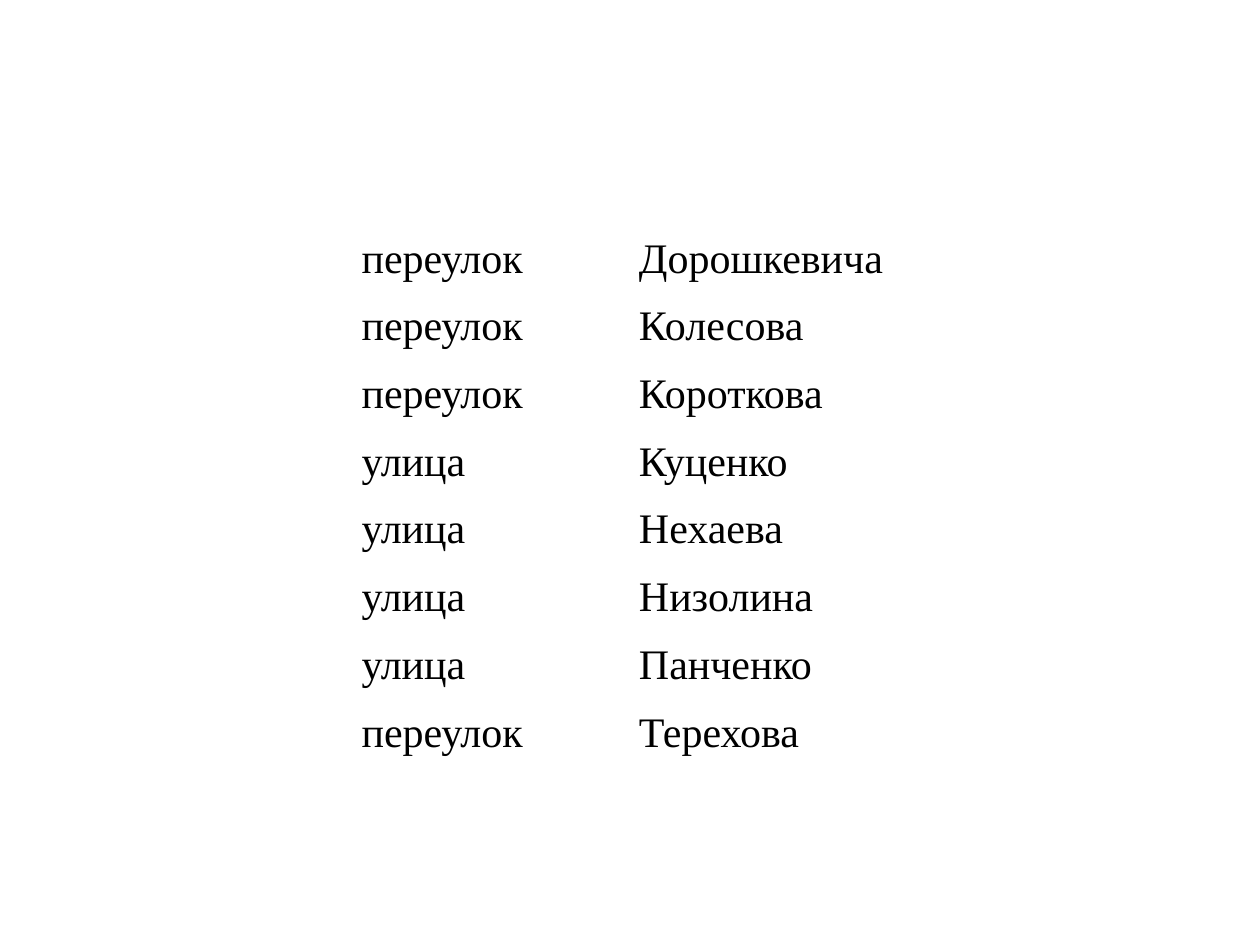
import pptx
import pptx.dml.color
import pptx.enum.text
import pptx.util

Cm = pptx.util.Cm
COLORS = {"text": "000000", "background": "FFFFFF"}
FONT = "Times New Roman"
COLUMN_WIDTHS = [1.88, 5.59, 7.01]
TABLE_HEIGHT = 10.92
STREETS = [
    ("переулок", "Дорошкевича"),
    ("переулок", "Колесова"),
    ("переулок", "Короткова"),
    ("улица", "Куценко"),
    ("улица", "Нехаева"),
    ("улица", "Низолина"),
    ("улица", "Панченко"),
    ("переулок", "Терехова"),
]


def rgb(name):
    return pptx.dml.color.RGBColor.from_string(COLORS[name])


def write_text(tf, text, size=24, color="text", font=FONT,
               align=pptx.enum.text.PP_ALIGN.JUSTIFY):
    p = tf.paragraphs[0]
    p.alignment = align
    r = p.add_run()
    r.text = text
    r.font.name = font
    r.font.size = pptx.util.Pt(size)
    r.font.color.rgb = rgb(color)


def format_cell(cell):
    cell.fill.solid()
    cell.fill.fore_color.rgb = rgb("background")
    cell.margin_left = cell.margin_right = Cm(0.05)
    cell.margin_top = cell.margin_bottom = 0


def add_street_table(s, left, top):
    sp = s.shapes.add_table(len(STREETS), len(COLUMN_WIDTHS), Cm(left), Cm(top),
                            Cm(sum(COLUMN_WIDTHS)), Cm(TABLE_HEIGHT))
    table = sp.table
    table.first_row = False
    table.horz_banding = False
    for column, width in zip(table.columns, COLUMN_WIDTHS):
        column.width = Cm(width)
    for row, street in zip(table.rows, STREETS):
        for cell, text in zip(row.cells, ("", *street)):
            format_cell(cell)
            if text:
                write_text(cell.text_frame, text)


def main():
    prs = pptx.Presentation()
    prs.slide_width = Cm(25.4)
    prs.slide_height = Cm(19.05)
    s = prs.slides.add_slide(prs.slide_layouts[6])
    add_street_table(s, left=5.36, top=4.75)
    prs.save("out.pptx")


if __name__ == "__main__":
    main()
